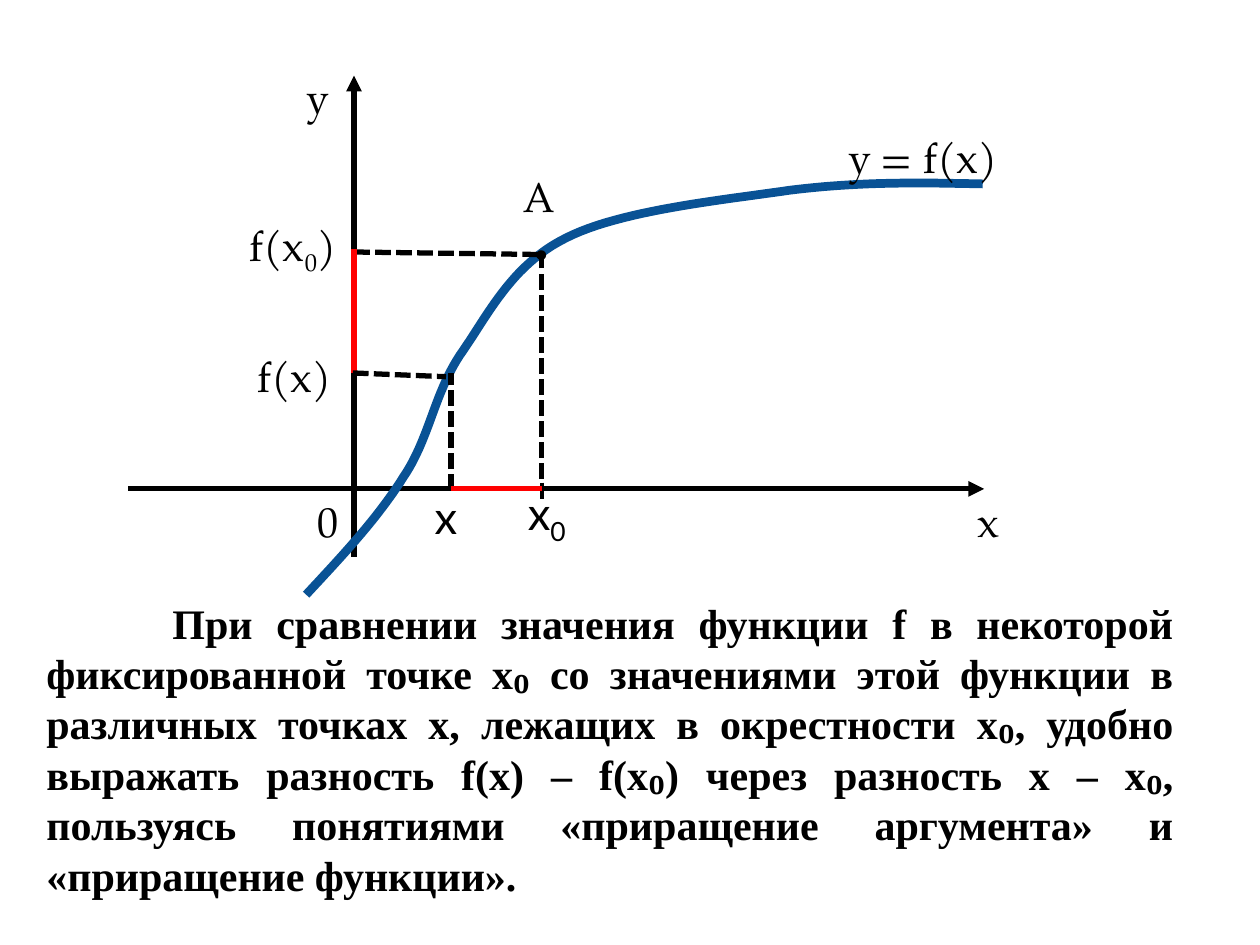
from dataclasses import dataclass
from itertools import groupby

from lxml import etree
from pptx import Presentation
from pptx.dml.color import RGBColor
from pptx.enum.dml import MSO_LINE
from pptx.enum.shapes import MSO_CONNECTOR, MSO_SHAPE
from pptx.enum.text import PP_ALIGN
from pptx.oxml.ns import qn
from pptx.util import Inches, Pt

BLACK = RGBColor(0, 0, 0)
RED = RGBColor(0xFF, 0, 0)
BLUE = RGBColor(0x09, 0x52, 0x95)
DASH = MSO_LINE.SQUARE_DOT
STRAIGHT = MSO_CONNECTOR.STRAIGHT
OVAL = MSO_SHAPE.OVAL
LEFT, JUSTIFY = PP_ALIGN.LEFT, PP_ALIGN.JUSTIFY
SERIF, SANS, TIMES = "TeX Gyre Pagella", "Lato", "Times New Roman"
ZERO = "₀"

AXIS_X, AXIS_Y = 2.81, 3.88
ARG, ARG0 = 3.58, 4.3
VAL, VAL0 = 2.96, 2.0
STEPS = 24

Point = tuple[float, float]


@dataclass
class Label:
    text: str
    left: float
    top: float
    width: float = 0.39
    height: float = 0.47
    font: str = SERIF
    size: float = 24.1


@dataclass
class Line:
    start: Point
    end: Point
    color: RGBColor = BLACK
    width: float = 3
    dashed: bool = False
    arrow: bool = False


LABELS = [
    Label("0", 2.42, 3.88),
    Label("у", 2.34, 0.52),
    Label("х", 7.66, 3.88),
    Label("у = f(x)", 6.64, 0.99, 1.8),
    Label("х₀", 4.09, 3.8, 0.55, 0.55, SANS, 26),
    Label(" f(x₀)", 1.8, 1.69, 1.02),
    Label("А", 4.06, 1.3, 0.31),
    Label("х", 3.35, 3.83, 0.55, 0.55, SANS, 26),
    Label(" f(x)", 1.86, 2.73, 1.02),
]

AXES = [
    Line((AXIS_X, 0.6), (AXIS_X, 4.42), arrow=True),
    Line((7.81, AXIS_Y), (1.02, AXIS_Y), arrow=True),
]

MARKS = [
    Line((ARG0, 3.83), (ARG0, 3.96), width=2.5),
    Line((ARG0, 3.8), (ARG0, VAL0), dashed=True),
    Line((AXIS_X, VAL0), (4.27, 2.02), dashed=True),
    Line((AXIS_X, VAL), (AXIS_X, 1.98), RED),
    Line((ARG, 3.89), (ARG, VAL), dashed=True),
    Line((2.8, VAL), (3.54, 2.99), dashed=True),
    Line((ARG, AXIS_Y), (ARG0, AXIS_Y), RED),
]

# Start point, then two control points and an end point for each Bezier part.
CURVE = [
    (2.43, 4.72),
    (2.71, 4.42), (3.0, 4.11), (3.2, 3.79),
    (3.41, 3.48), (3.44, 3.14), (3.65, 2.82),
    (3.87, 2.51), (4.05, 2.11), (4.49, 1.89),
    (4.92, 1.67), (5.72, 1.59), (6.27, 1.51),
    (6.83, 1.44), (7.31, 1.45), (7.8, 1.46),
]

BODY = (
    "При сравнении значения функции f в некоторой фиксированной точке x₀ "
    "со значениями этой функции в различных точках x, лежащих в окрестности x₀, "
    "удобно выражать разность f(x) – f(x₀) через разность x – x₀, пользуясь "
    "понятиями «приращение аргумента» и «приращение функции»."
)


def add_text(slide, text: str, left: float, top: float, width: float,
             height: float, *, font: str, size: float, bold: bool = False,
             align=LEFT, before: float = 0, indent: float = 0,
             lower: bool = True) -> None:
    """Add a text box; lower turns each small zero into a subscript run."""
    box = slide.shapes.add_textbox(
        Inches(left), Inches(top), Inches(width), Inches(height))
    frame = box.text_frame
    frame.word_wrap = True
    para = frame.paragraphs[0]
    para.alignment = align
    para.space_before = Pt(before)
    if indent:
        para._p.get_or_add_pPr().set("indent", str(Inches(indent)))
    for small, chars in groupby(text, lambda char: char == ZERO):
        run = para.add_run()
        run.text = "".join(chars)
        run.font.name = SERIF if small and not lower else font
        run.font.size = Pt(size)
        run.font.bold = bold
        run.font.color.rgb = BLACK
        if small and lower:
            run.text = "0"
            run._r.get_or_add_rPr().set("baseline", "-25000")


def add_line(slide, line: Line) -> None:
    ends = [Inches(value) for value in (*line.start, *line.end)]
    link = slide.shapes.add_connector(STRAIGHT, *ends)
    link.line.color.rgb = line.color
    link.line.width = Pt(line.width)
    if line.dashed:
        link.line.dash_style = DASH
    props = link._element.spPr
    if line.arrow:
        head = etree.SubElement(props.find(qn("a:ln")), qn("a:headEnd"))
        head.set("type", "triangle")
    etree.SubElement(props, qn("a:effectLst"))


def bezier(parts: list[Point], t: float) -> Point:
    s = 1 - t
    weights = (s ** 3, 3 * s * s * t, 3 * s * t * t, t ** 3)
    x, y = (sum(w * v for w, v in zip(weights, axis)) for axis in zip(*parts))
    return x, y


def add_curve(slide, points: list[Point]) -> None:
    path = [points[0]] + [
        bezier(points[i:i + 4], step / STEPS)
        for i in range(0, len(points) - 1, 3)
        for step in range(1, STEPS + 1)
    ]
    start, *rest = [(Inches(x), Inches(y)) for x, y in path]
    build = slide.shapes.build_freeform(*start)
    build.add_line_segments(rest, close=False)
    curve = build.convert_to_shape()
    curve.shadow.inherit = False
    curve.fill.background()
    curve.line.color.rgb = BLUE
    curve.line.width = Pt(5)


def add_dot(slide, left: float, top: float, size: float) -> None:
    dot = slide.shapes.add_shape(
        OVAL, Inches(left), Inches(top), Inches(size), Inches(size))
    dot.shadow.inherit = False
    dot.fill.solid()
    dot.fill.fore_color.rgb = BLACK
    dot.line.color.rgb = BLACK
    dot.line.width = Pt(2)


def main() -> None:
    deck = Presentation()
    deck.slide_width, deck.slide_height = Inches(10), Inches(7.5)
    slide = deck.slides.add_slide(deck.slide_layouts[6])
    for line in AXES:
        add_line(slide, line)
    add_curve(slide, CURVE)
    for line in MARKS:
        add_line(slide, line)
    add_dot(slide, 4.27, VAL0, 0.05)
    for item in LABELS:
        add_text(slide, item.text, item.left, item.top, item.width,
                 item.height, font=item.font, size=item.size, before=6)
    add_text(slide, BODY, 0.27, 4.69, 9.14, 2.52, font=TIMES, size=24,
             bold=True, align=JUSTIFY, indent=1, lower=False)
    deck.save("out.pptx")


if __name__ == "__main__":
    main()
